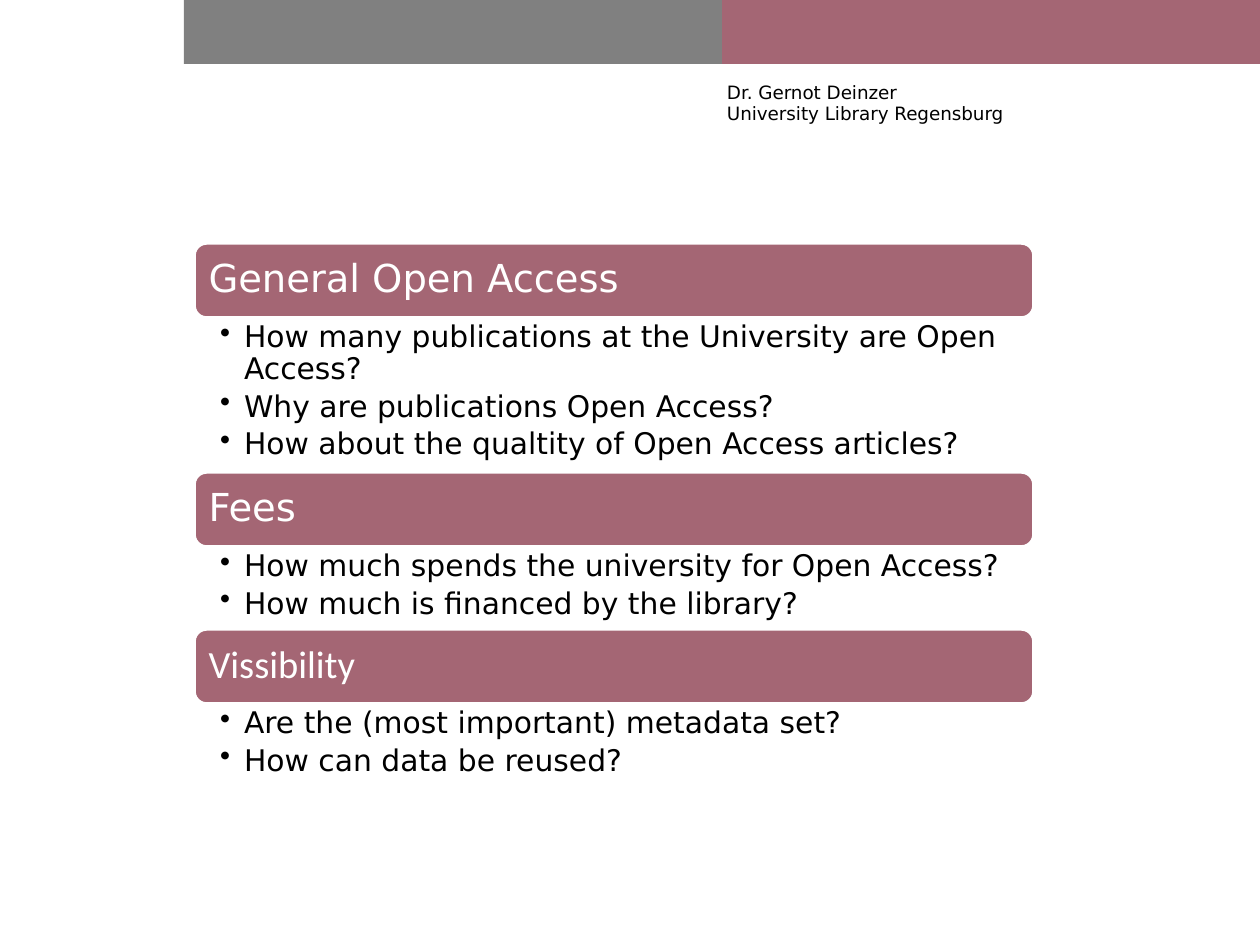
from lxml import etree
from pptx import Presentation, util as u
from pptx.dml.color import RGBColor
from pptx.enum import shapes, text
from pptx.oxml.ns import qn

PX = 914400 / 126
ROSE, GREY, WHITE, BLACK = "A46674", "808080", "FFFFFF", "000000"
SANS = "DejaVu Sans"

SECTIONS = [
    # title, title font, body height, questions
    ("General Open Access", SANS, 154, [
        "How many publications at the University are Open Access?",
        "Why are publications Open Access?",
        "How about the qualtity of Open Access articles?"]),
    ("Fees", SANS, 82, [
        "How much spends the university for Open Access?",
        "How much is financed by the library?"]),
    ("Vissibility", "Calibri", 82, [
        "Are the (most important) metadata set?",
        "How can data be reused?"]),
]


def px(n):
    return u.Emu(round(n * PX))


def color(value):
    return RGBColor.from_string(value)


def add_block(s, kind, x, y, w, h, fill):
    sp = s.shapes.add_shape(kind, px(x), px(y), px(w), px(h))
    sp.shadow.inherit = False
    sp.fill.solid()
    sp.fill.fore_color.rgb = color(fill)
    sp.line.fill.background()
    return sp


def add_text_box(s, x, y, w, h, margins):
    tf = s.shapes.add_textbox(px(x), px(y), px(w), px(h)).text_frame
    set_margins(tf, *margins)
    return tf


def set_margins(tf, left, top, right, bottom):
    tf.word_wrap = True
    tf.margin_left, tf.margin_top = px(left), px(top)
    tf.margin_right, tf.margin_bottom = px(right), px(bottom)


def write(tf, lines, size, hue, spacing, font=SANS, after=0, bullet=False):
    tf.text = "\n".join(lines)
    for p in tf.paragraphs:
        p.alignment = text.PP_ALIGN.LEFT
        p.line_spacing = spacing
        p.space_after = u.Pt(after)
        if bullet:
            pPr = p._p.get_or_add_pPr()
            pPr.set("marL", str(px(24)))
            pPr.set("indent", str(px(-24)))
            etree.SubElement(pPr, qn("a:buChar")).set("char", "•")
        for r in p.runs:
            r.font.size = u.Pt(size)
            r.font.name = font
            r.font.color.rgb = color(hue)


def add_banner(s, x, y, w, h):
    # Two equal bars, with the author under the right one
    half = w // 2
    for i, fill in enumerate((GREY, ROSE)):
        add_block(s, shapes.MSO_SHAPE.RECTANGLE, x + i * half, y, half, h, fill)
    tf = add_text_box(s, x + half + 5, y + h + 18, half - 5, 92, (0, 0, 0, 0))
    write(tf, ["Dr. Gernot Deinzer", "University Library Regensburg"],
          10.5, BLACK, u.Pt(12))


def add_sections(s, x, y, w, title_h):
    # Stacked title bars, each followed by its questions
    for title, font, body_h, questions in SECTIONS:
        bar = add_block(s, shapes.MSO_SHAPE.ROUNDED_RECTANGLE, x, y, w, title_h, ROSE)
        bar.line.color.rgb = color(WHITE)
        bar.line.width = u.Pt(2)
        tf = bar.text_frame
        set_margins(tf, 11, 11, 11, 11)
        tf.vertical_anchor = text.MSO_ANCHOR.MIDDLE
        write(tf, [title], 22, WHITE, 0.9, font)
        y += title_h

        tf = add_text_box(s, x, y, w, body_h, (26, 4, 21, 4))
        write(tf, questions, 17, BLACK, 0.9, after=3, bullet=True)
        y += body_h


def main():
    prs = Presentation()
    prs.slide_width, prs.slide_height = px(1260), px(945)
    s = prs.slides.add_slide(prs.slide_layouts[6])
    add_banner(s, 184, 0, 1076, 64)
    add_sections(s, 194, 243, 840, 75)
    prs.save("out.pptx")


if __name__ == "__main__":
    main()
